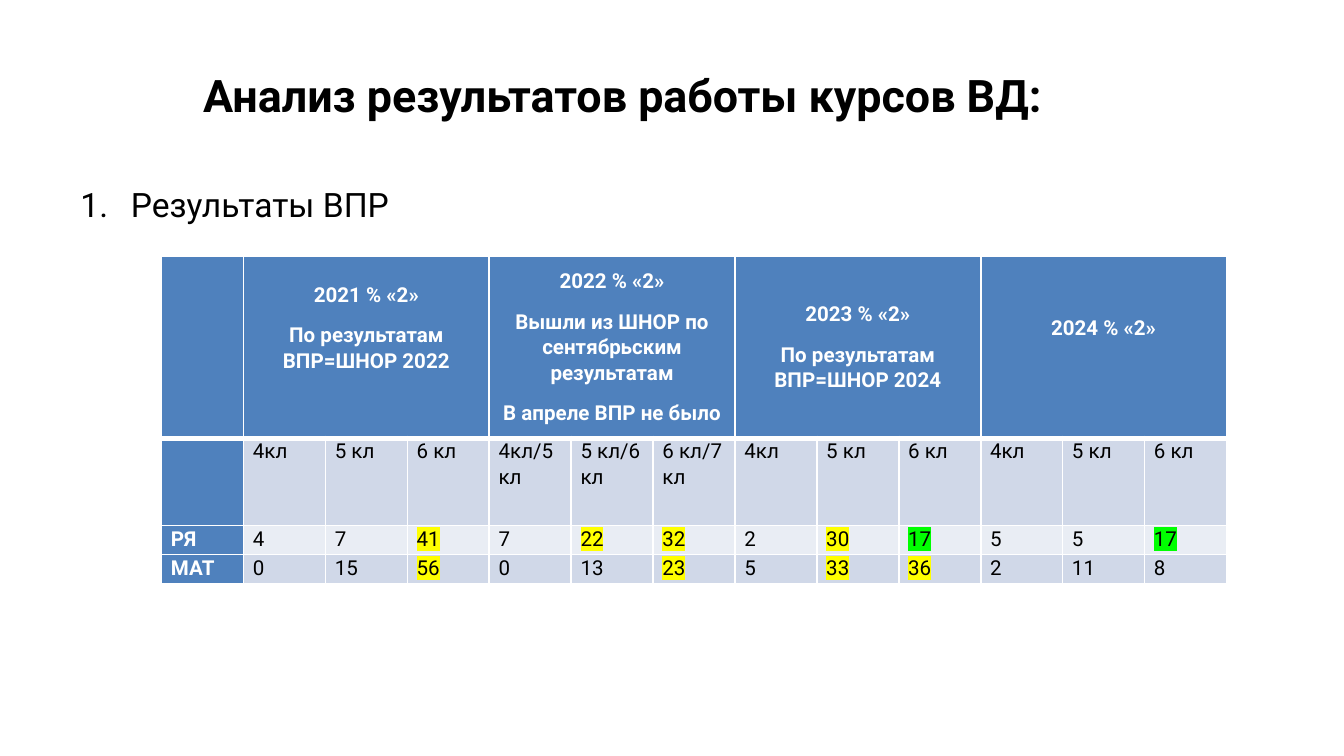
from lxml import etree
from pptx import Presentation
from pptx.dml.color import RGBColor
from pptx.enum import text
from pptx.oxml import ns
from pptx.util import Pt

BLACK = RGBColor(0x00, 0x00, 0x00)
WHITE = RGBColor(0xFF, 0xFF, 0xFF)
BLUE = RGBColor(0x4F, 0x81, 0xBD)
BAND_DARK = RGBColor(0xD0, 0xD8, 0xE8)
BAND_LIGHT = RGBColor(0xE9, 0xED, 0xF4)
YELLOW = RGBColor(0xFF, 0xFF, 0x00)
GREEN = RGBColor(0x00, 0xFF, 0x00)
FONT = "Roboto"

TITLE = "Анализ результатов работы курсов ВД:"
SUBTITLE = "Результаты ВПР"

# paragraphs of each year heading, extra bottom margin that lifts it
YEARS = [
    (["2021 % «2»", "По результатам ВПР=ШНОР 2022"], 21),
    (["2022 % «2»", "Вышли из ШНОР по сентябрьским результатам",
      "В апреле ВПР не было"], 0),
    (["2023 % «2»", "По результатам ВПР=ШНОР 2024"], 0),
    (["2024 % «2»"], 21),
]
GRADES = ["4кл", "5 кл", "6 кл"]
GRADES_2022 = ["4кл/5 кл", "5 кл/6 кл", "6 кл/7 кл"]
ROWS = [
    ["", *GRADES, *GRADES_2022, *GRADES, *GRADES],
    ["РЯ", 4, 7, 41, 7, 22, 32, 2, 30, 17, 5, 5, 17],
    ["МАТ", 0, 15, 56, 0, 13, 23, 5, 33, 36, 2, 11, 8],
]
BANDS = [BAND_DARK, BAND_LIGHT, BAND_DARK]
ROW_HEIGHTS = [97.7, 46.8, 15.6, 15.6]
COLUMN_WIDTH = 43.9
SPAN = len(GRADES)


def highlight_for(value):
    if not isinstance(value, int) or value < 17:
        return None
    return GREEN if value == 17 else YELLOW


def add_run(p, words, size, color, bold=False, highlight=None):
    r = p.add_run()
    r.text = words
    r.font.color.rgb = color
    for name, value in dict(name=FONT, size=Pt(size), bold=bold).items():
        setattr(r.font, name, value)
    if highlight is not None:
        mark = etree.Element(ns.qn("a:highlight"))
        etree.SubElement(mark, ns.qn("a:srgbClr"), val=str(highlight))
        r.font._element.find(ns.qn("a:latin")).addprevious(mark)


def style_cell(cell, fill, top=1, bottom=1):
    """Give the cell white borders, its fill and narrow margins."""
    tc_pr = cell._tc.get_or_add_tcPr()
    for side, width in dict(L=1, R=1, T=top, B=bottom).items():
        line = etree.SubElement(tc_pr, ns.qn(f"a:ln{side}"), w=str(Pt(width)))
        solid = etree.SubElement(line, ns.qn("a:solidFill"))
        etree.SubElement(solid, ns.qn("a:srgbClr"), val=str(WHITE))
    cell.fill.solid()
    cell.fill.fore_color.rgb = fill
    margins = dict(left=5, right=5, top=0, bottom=0)
    for side, width in margins.items():
        setattr(cell, f"margin_{side}", Pt(width))


def write_cell(cell, paragraphs, color, bold, align, highlight=None):
    tf = cell.text_frame
    for i, words in enumerate(paragraphs):
        p = tf.add_paragraph() if i else tf.paragraphs[0]
        p.alignment, p.line_spacing, p.space_after = align, 1.07, Pt(8)
        add_run(p, words, 11, color, bold, highlight)


prs = Presentation()
prs.slide_width, prs.slide_height = Pt(720), Pt(405)
s = prs.slides.add_slide(prs.slide_layouts[5])

title = s.shapes.title
title.left, title.top, title.width, title.height = Pt(36), Pt(16.5), Pt(595), Pt(68)
tf = title.text_frame
tf.auto_size = text.MSO_AUTO_SIZE.NONE
tf.vertical_anchor = text.MSO_ANCHOR.MIDDLE
p = tf.paragraphs[0]
p.alignment = text.PP_ALIGN.CENTER
add_run(p, TITLE, 24, BLACK, bold=True)

subtitle = s.shapes.add_textbox(Pt(36), Pt(95), Pt(648), Pt(32))
tf = subtitle.text_frame
tf.word_wrap = True
p = tf.paragraphs[0]
p_pr = p._p.get_or_add_pPr()
p_pr.set("marL", str(Pt(27)))
p_pr.set("indent", str(-Pt(27)))
etree.SubElement(p_pr, ns.qn("a:buFont"), typeface=FONT)
etree.SubElement(p_pr, ns.qn("a:buAutoNum"), type="arabicPeriod")
add_run(p, SUBTITLE, 18, BLACK)

column_count = len(ROWS[0])
table = s.shapes.add_table(
    len(ROW_HEIGHTS), column_count, Pt(86.6), Pt(137),
    Pt(COLUMN_WIDTH * column_count), Pt(sum(ROW_HEIGHTS))).table
for column in table.columns:
    column.width = Pt(COLUMN_WIDTH)
for row, height in zip(table.rows, ROW_HEIGHTS):
    row.height = Pt(height)

for cell in table.rows[0].cells:
    style_cell(cell, BLUE, bottom=3)
for i, (paragraphs, lift) in enumerate(YEARS):
    first = 1 + i * SPAN
    cell = table.cell(0, first)
    cell.merge(table.cell(0, first + SPAN - 1))
    cell.vertical_anchor = text.MSO_ANCHOR.MIDDLE
    cell.margin_bottom = Pt(lift)
    write_cell(cell, paragraphs, WHITE, True, text.PP_ALIGN.CENTER)

for i, (values, band) in enumerate(zip(ROWS, BANDS), start=1):
    for j, value in enumerate(values):
        cell = table.cell(i, j)
        is_label = j == 0
        style_cell(cell, BLUE if is_label else band, top=3 if i == 1 else 1)
        if value != "":
            write_cell(cell, [str(value)], WHITE if is_label else BLACK, is_label,
                       text.PP_ALIGN.LEFT, highlight_for(value))

prs.save("out.pptx")
